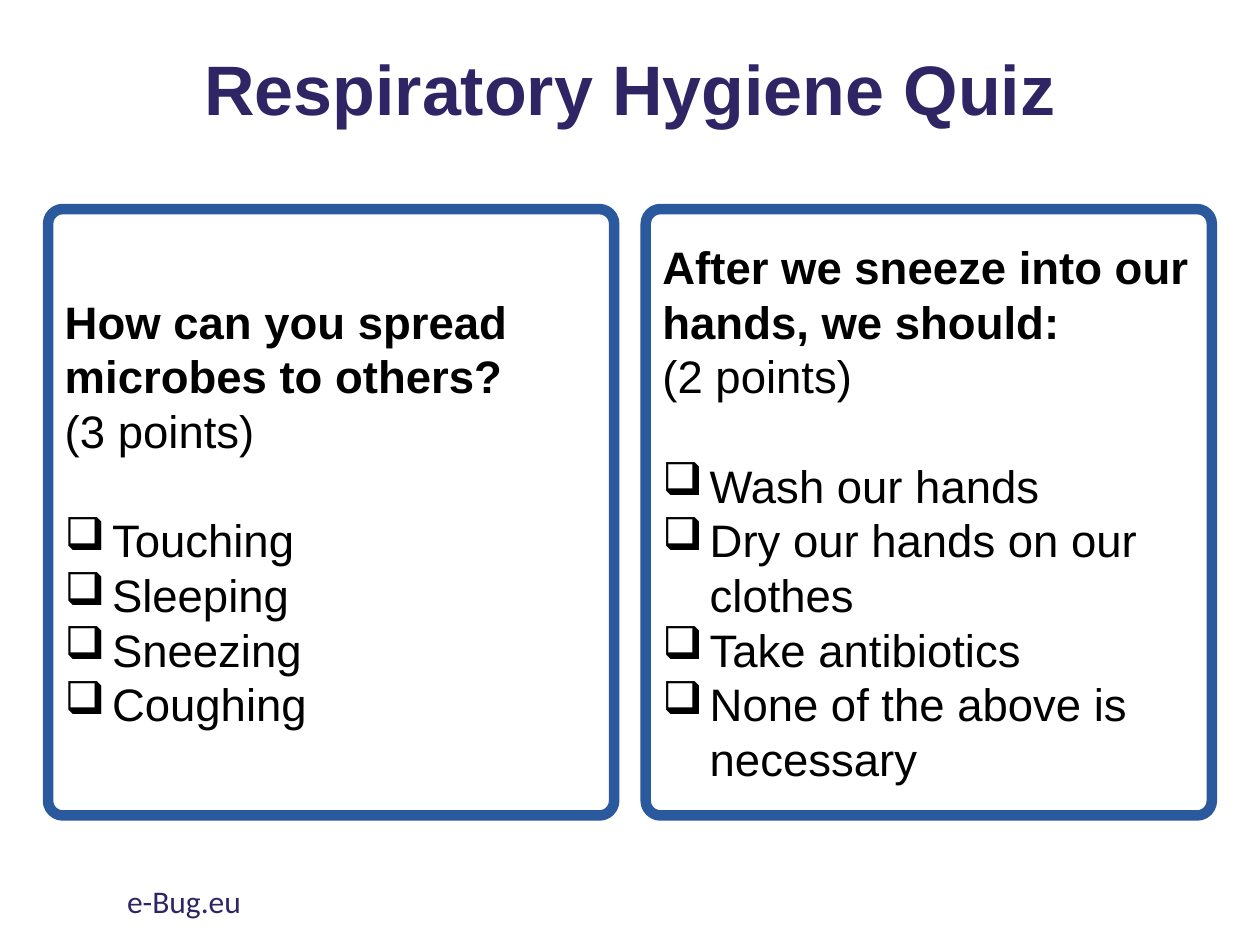
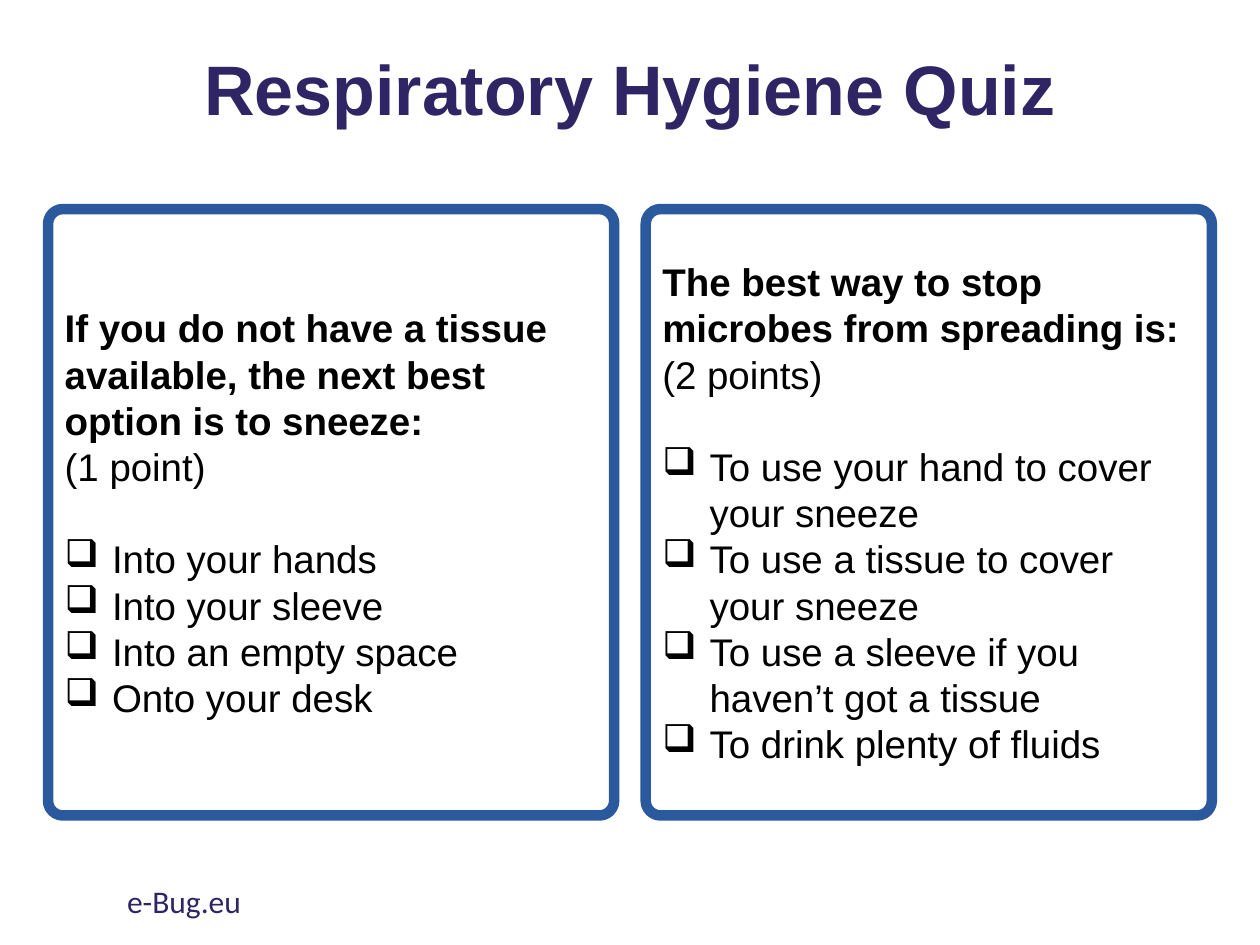
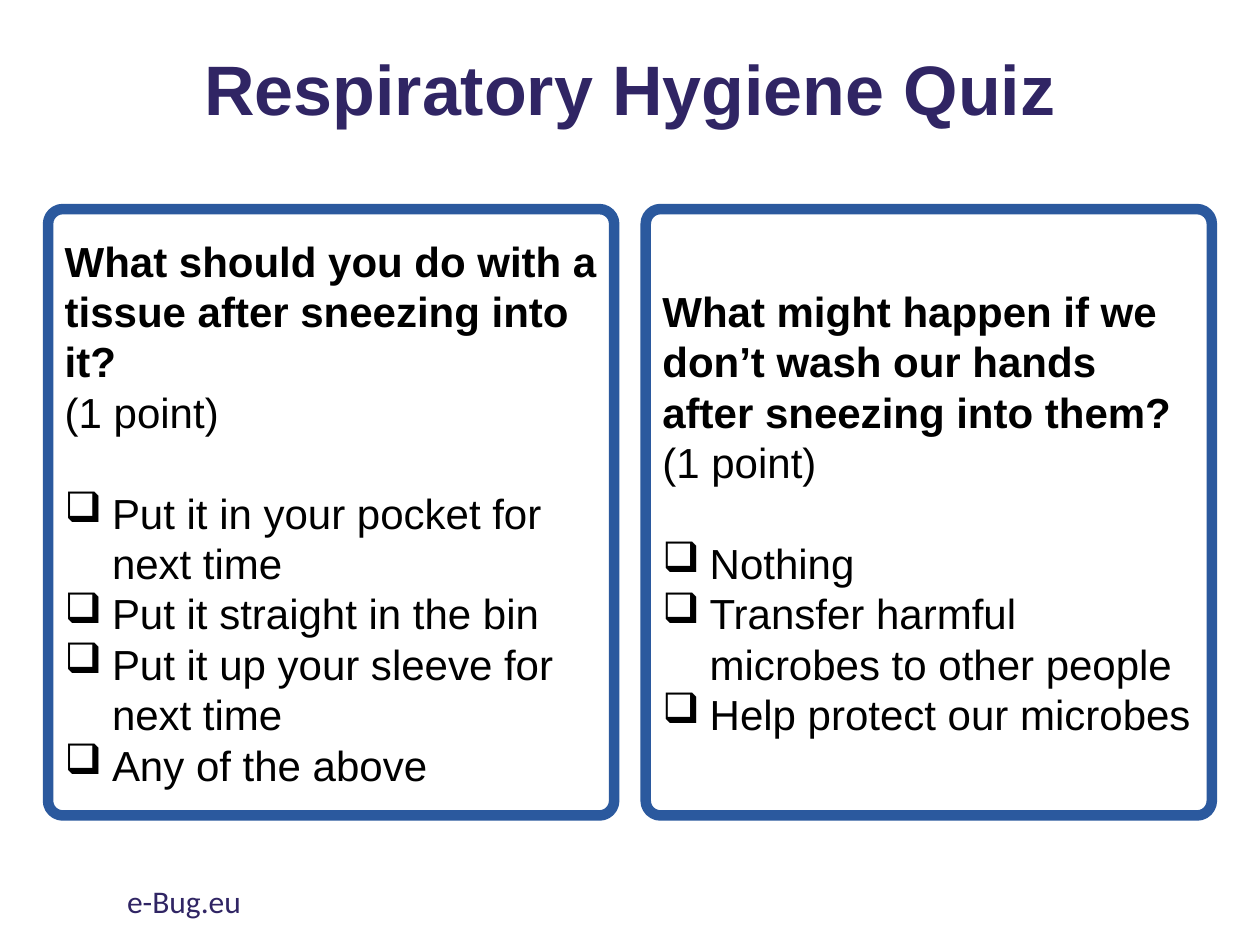
from lxml import etree
from pptx import Presentation
from pptx.dml.color import RGBColor
from pptx.enum import shapes, text
from pptx.oxml import ns
from pptx.util import Pt

TITLE = "Respiratory Hygiene Quiz"
FOOTER = "e-Bug.eu"

# Each slide: text size, then (question, points, answers) for each card
SLIDES = [
    (26, [
        ("How can you spread microbes to others?", "(3 points)",
         ["Touching", "Sleeping", "Sneezing", "Coughing"]),
        ("After we sneeze into our hands, we should:", "(2 points)",
         ["Wash our hands", "Dry our hands on our clothes",
          "Take antibiotics", "None of the above is necessary"]),
    ]),
    (22, [
        ("If you do not have a tissue available, the next best option is to sneeze:",
         "(1 point)",
         ["Into your hands", "Into your sleeve", "Into an empty space",
          "Onto your desk"]),
        ("The best way to stop microbes from spreading is:", "(2 points)",
         ["To use your hand to cover your sneeze",
          "To use a tissue to cover your sneeze",
          "To use a sleeve if you haven’t got a tissue",
          "To drink plenty of fluids"]),
    ]),
    (24, [
        ("What should you do with a tissue after sneezing into it?", "(1 point)",
         ["Put it in your pocket for next time", "Put it straight in the bin",
          "Put it up your sleeve for next time", "Any of the above"]),
        ("What might happen if we don’t wash our hands after sneezing into them?",
         "(1 point)",
         ["Nothing", "Transfer harmful microbes to other people",
          "Help protect our microbes"]),
    ]),
]

PURPLE, BLUE, BLACK = "302564", "2B599E", "000000"
PAGE_WIDTH, PAGE_HEIGHT = 720, 540
TITLE_AREA = (49.5, 20, 621, 65.5)
FOOTER_AREA = (65.5, 500.5, 243, 29)
CARD_TOP, CARD_WIDTH, CARD_HEIGHT, CARD_GAP = 119.5, 323.5, 346.5, 18
CARD_LEFT = (PAGE_WIDTH - 2 * CARD_WIDTH - CARD_GAP) / 2
LINE_HEIGHT = 1.2
BULLET, BULLET_INDENT = "❑", 27


def color(value):
    return RGBColor.from_string(value)


def set_format(target, values):
    for name, value in values.items():
        setattr(target, name, value)


def write(paragraph, words, size, hue=BLACK, name="Arial", bold=False):
    span = paragraph.add_run()
    span.text = words
    set_format(span.font, {"size": Pt(size), "name": name, "bold": bold})
    span.font.color.rgb = color(hue)


def add_bullet(paragraph):
    properties = paragraph._p.get_or_add_pPr()
    properties.set("marL", str(Pt(BULLET_INDENT)))
    properties.set("indent", str(-Pt(BULLET_INDENT)))
    etree.SubElement(properties, ns.qn("a:buChar")).set("char", BULLET)


def add_label(page, area, words, size, layout, anchor, **style):
    box = page.shapes.add_textbox(*map(Pt, area))
    set_format(box.text_frame, {"word_wrap": True, "vertical_anchor": anchor})
    para = box.text_frame.paragraphs[0]
    set_format(para, layout)
    write(para, words, size, PURPLE, **style)


def add_card(page, column, size, question, points, answers):
    left = CARD_LEFT + column * (CARD_WIDTH + CARD_GAP)
    card = page.shapes.add_shape(
        shapes.MSO_SHAPE.ROUNDED_RECTANGLE,
        *map(Pt, (left, CARD_TOP, CARD_WIDTH, CARD_HEIGHT)))
    card.adjustments[0] = 0.026
    card.shadow.inherit = False
    card.fill.background()
    card.line.color.rgb = color(BLUE)
    card.line.width = Pt(6)
    frame = card.text_frame
    set_format(frame, {"word_wrap": True,
                       "vertical_anchor": text.MSO_ANCHOR.MIDDLE})

    line = Pt(LINE_HEIGHT * size)
    for index, words in enumerate([question, points, *answers]):
        para = frame.add_paragraph() if index else frame.paragraphs[0]
        if index >= 2:
            add_bullet(para)
        set_format(para, {"alignment": text.PP_ALIGN.LEFT,
                          "line_spacing": line})
        if index == 2:
            para.space_before = line
        write(para, words, size, bold=index == 0)


def main():
    deck = Presentation()
    set_format(deck, {"slide_width": Pt(PAGE_WIDTH),
                      "slide_height": Pt(PAGE_HEIGHT)})
    for size, cards in SLIDES:
        page = deck.slides.add_slide(deck.slide_layouts[6])
        add_label(page, TITLE_AREA, TITLE, 40,
                  {"alignment": text.PP_ALIGN.CENTER, "line_spacing": 0.9},
                  text.MSO_ANCHOR.MIDDLE, bold=True)
        for column, card in enumerate(cards):
            add_card(page, column, size, *card)
        add_label(page, FOOTER_AREA, FOOTER, 18,
                  {"alignment": text.PP_ALIGN.LEFT},
                  text.MSO_ANCHOR.TOP, name="Calibri")
    deck.save("out.pptx")


if __name__ == "__main__":
    main()
